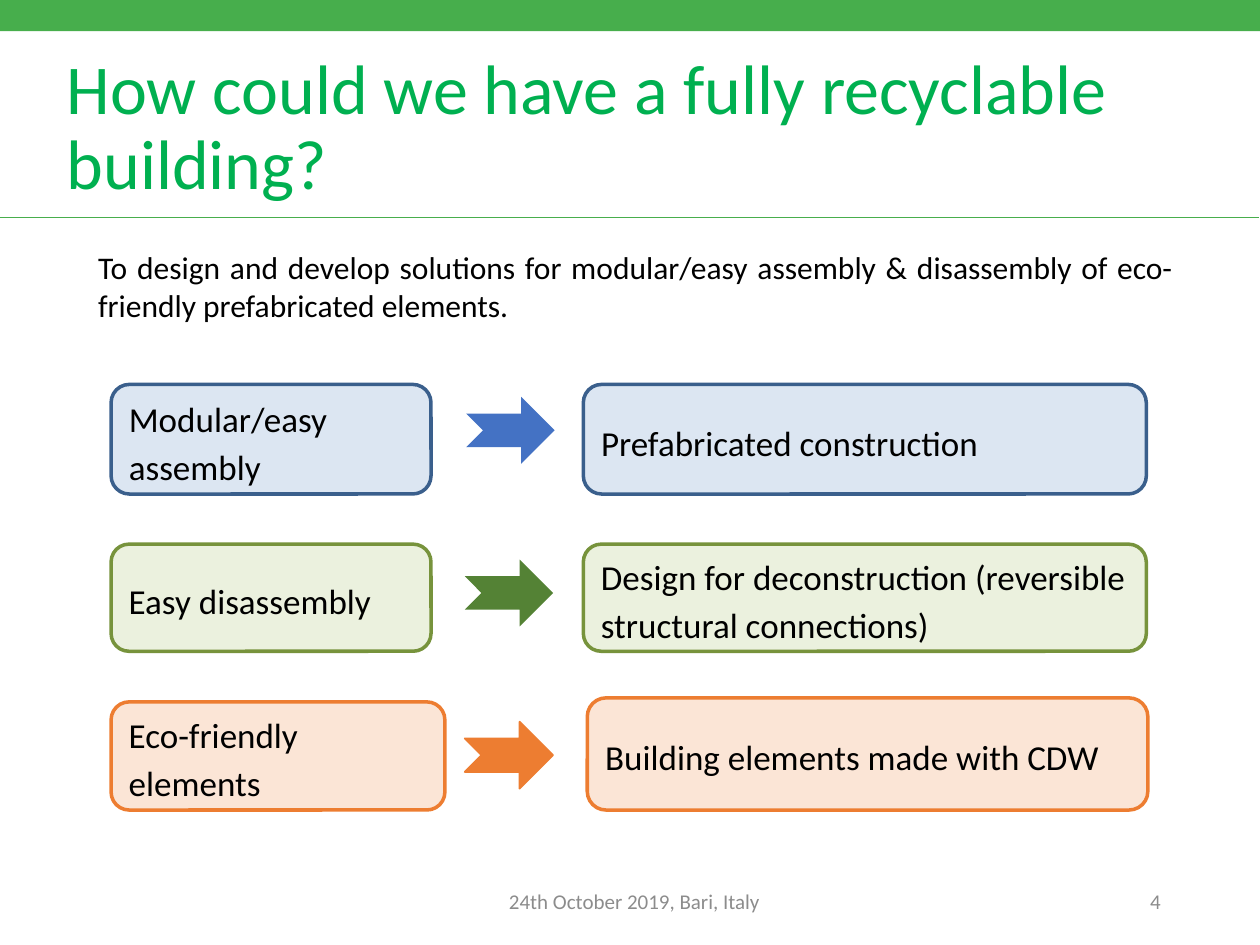
from dataclasses import dataclass
from typing import Any

from lxml.etree import SubElement
from pptx import Presentation
from pptx.dml.color import RGBColor
from pptx.enum.shapes import MSO_CONNECTOR, MSO_SHAPE
from pptx.enum.text import MSO_ANCHOR, MSO_AUTO_SIZE, PP_ALIGN
from pptx.oxml.ns import qn
from pptx.util import Cm, Pt

COLORS = {
    "band": "47AE4C", "title": "00B050", "text": "000000", "footer": "8C8C8C",
    "blue_fill": "DCE6F2", "blue_line": "3A5F8C", "blue_arrow": "4472C4",
    "green_fill": "EBF1DE", "green_line": "77933C", "green_arrow": "548235",
    "orange_fill": "FBE5D6", "orange_line": "ED7D31", "orange_arrow": "ED7D31",
}

ROWS = [
    ("blue", "Modular/easy assembly", (2.24, 7.75, 6.45, 2.21), (9.4, 8),
     "Prefabricated construction", (11.76, 7.75, 11.35, 2.21)),
    ("green", "Easy disassembly", (2.24, 10.97, 6.45, 2.16), (9.37, 11.28),
     "Design for deconstruction (reversible structural connections)",
     (11.76, 10.97, 11.35, 2.16)),
    ("orange", "Eco-friendly elements", (2.24, 14.15, 6.73, 2.18), (9.37, 14.55),
     "Building elements made with CDW", (11.84, 14.07, 11.3, 2.26)),
]


@dataclass
class SlideBuilder:
    """Hold the slide style and draw each kind of element."""

    slide: Any
    font: str = "Calibri"

    def color(self, name):
        return RGBColor.from_string(COLORS[name])

    def fill_text(self, shape, text, size, color="text", align=PP_ALIGN.LEFT,
                  anchor=MSO_ANCHOR.MIDDLE, spacing=1.0):
        frame = shape.text_frame
        frame.word_wrap = True
        frame.auto_size = MSO_AUTO_SIZE.NONE
        frame.vertical_anchor = anchor
        paragraph = frame.paragraphs[0]
        paragraph.alignment = align
        paragraph.line_spacing = spacing
        run = paragraph.add_run()
        run.text = text
        run.font.name = self.font
        run.font.size = Pt(size)
        run.font.color.rgb = self.color(color)

    def title(self, text, box):
        shape = self.slide.shapes.title
        shape.left, shape.top, shape.width, shape.height = map(Cm, box)
        self.fill_text(shape, text, 40, "title", spacing=0.9)

    def text(self, text, box, size, **style):
        self.fill_text(self.slide.shapes.add_textbox(*map(Cm, box)), text, size, **style)

    def shape(self, kind, box, fill, line=None, line_width=2):
        shape = self.slide.shapes.add_shape(kind, *map(Cm, box))
        shape.shadow.inherit = False
        shape.fill.solid()
        shape.fill.fore_color.rgb = self.color(fill)
        if line:
            shape.line.color.rgb = self.color(line)
            shape.line.width = Pt(line_width)
        else:
            shape.line.fill.background()
        return shape

    def rule(self, start_x, end_x, y, color, width):
        connector = self.slide.shapes.add_connector(
            MSO_CONNECTOR.STRAIGHT, Cm(start_x), Cm(y), Cm(end_x), Cm(y))
        connector.line.color.rgb = self.color(color)
        connector.line.width = Pt(width)
        SubElement(connector._element.spPr, qn("a:effectLst"))

    def card(self, text, box, theme):
        card = self.shape(MSO_SHAPE.ROUNDED_RECTANGLE, box, f"{theme}_fill", f"{theme}_line")
        self.fill_text(card, text, 20, spacing=1.14)

    def arrow(self, position, theme):
        outline = "orange_line" if theme == "orange" else None
        self.shape(MSO_SHAPE.NOTCHED_RIGHT_ARROW, (*position, 1.78, 1.35),
                   f"{theme}_arrow", outline, 1)


def main():
    presentation = Presentation()
    presentation.slide_width, presentation.slide_height = Cm(25.4), Cm(19.05)
    builder = SlideBuilder(presentation.slides.add_slide(presentation.slide_layouts[5]))

    builder.shape(MSO_SHAPE.RECTANGLE, (0, 0, 25.4, 0.63), "band")
    builder.rule(-0.02, 25.38, 4.39, "band", 0.5)
    builder.title("How could we have a fully recyclable building?", (1.09, 1.02, 23.52, 3.17))
    builder.text(
        "To design and develop solutions for modular/easy assembly & disassembly of "
        "eco-friendly prefabricated elements.",
        (1.73, 4.88, 22.17, 1.8), 18, align=PP_ALIGN.JUSTIFY, anchor=MSO_ANCHOR.TOP)

    for theme, goal, goal_box, arrow_position, answer, answer_box in ROWS:
        builder.card(goal, goal_box, theme)
        builder.arrow(arrow_position, theme)
        builder.card(answer, answer_box, theme)

    builder.text("24th October 2019, Bari, Italy", (8.41, 17.65, 8.76, 1.02), 12,
                 color="footer", align=PP_ALIGN.CENTER)
    builder.text("4", (21.16, 17.65, 2.49, 1.02), 12, color="footer", align=PP_ALIGN.RIGHT)
    presentation.save("out.pptx")


if __name__ == "__main__":
    main()
